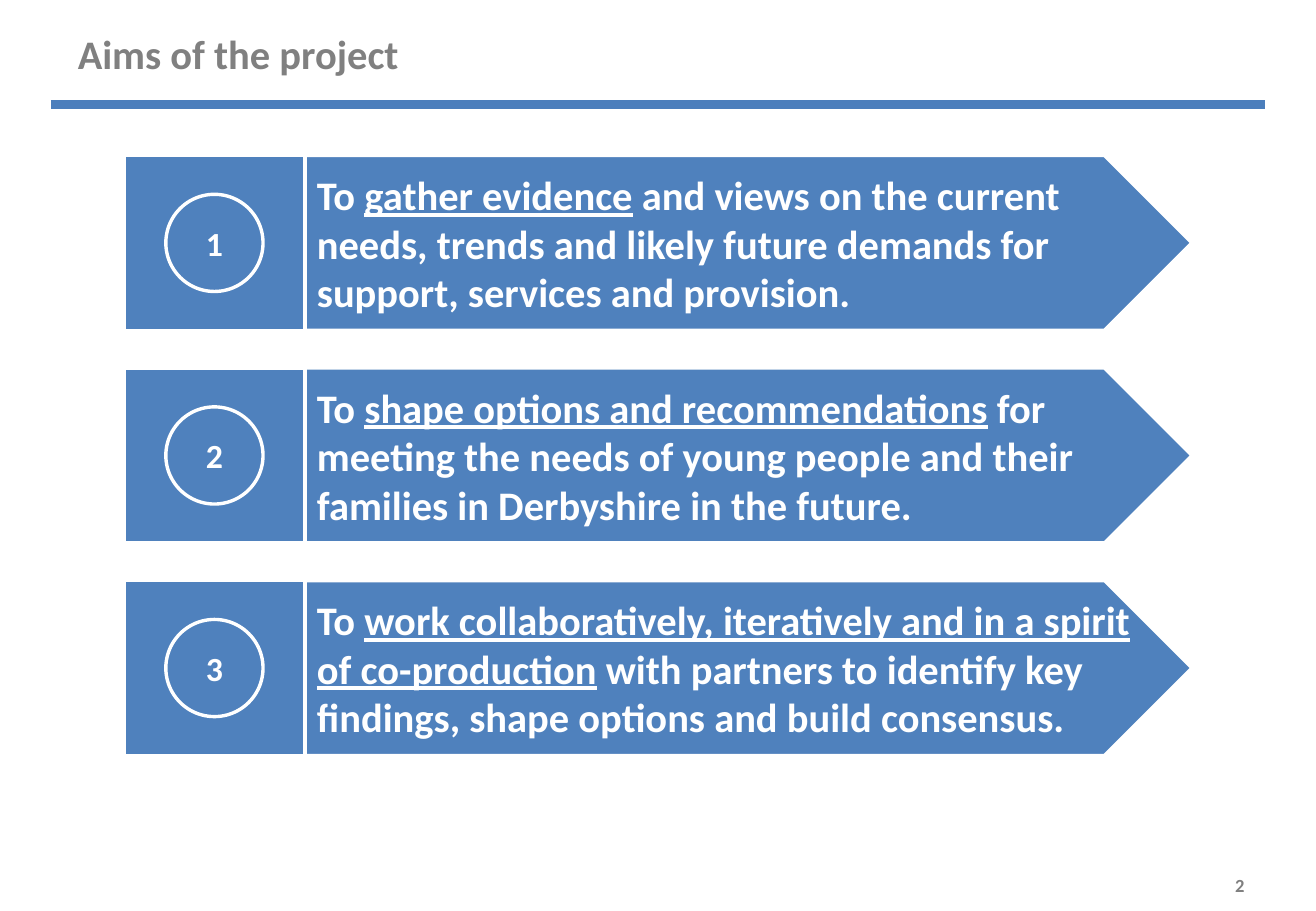
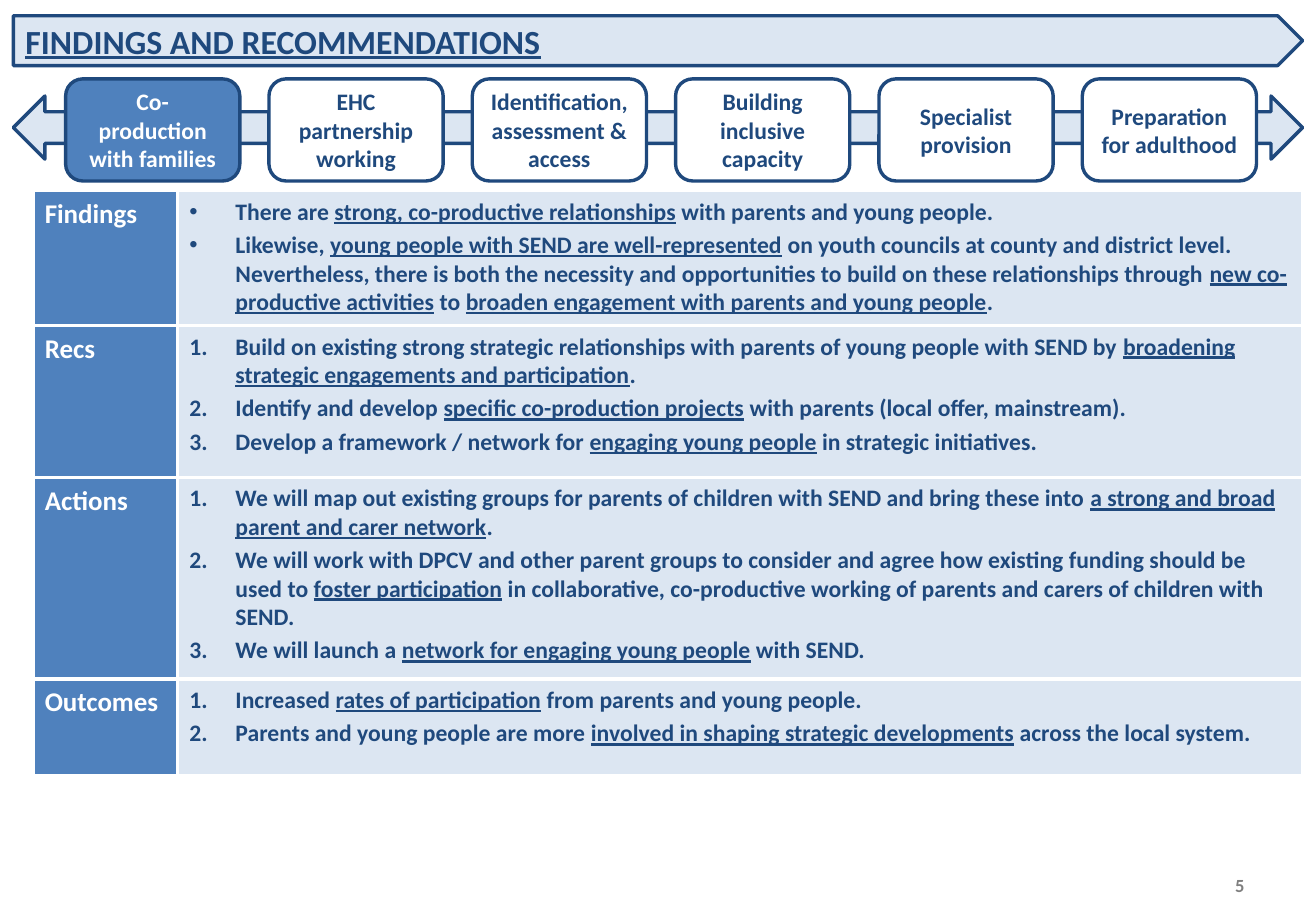
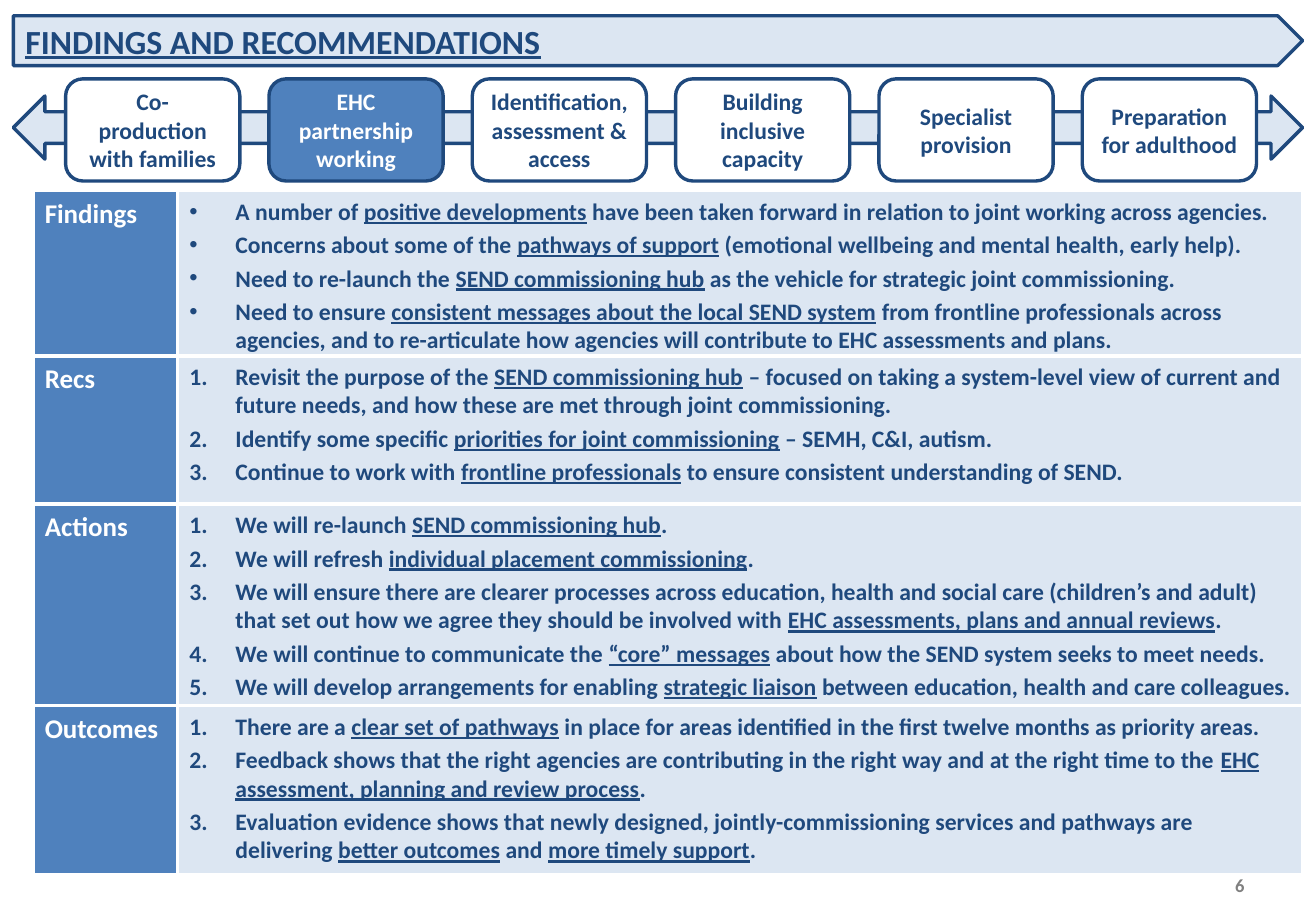
from dataclasses import dataclass

from lxml import etree
from pptx import Presentation
from pptx import util as u
from pptx.dml.color import RGBColor
from pptx.enum import shapes, text
from pptx.oxml.ns import qn

SHAPE, ALIGN, ANCHOR = shapes.MSO_SHAPE, text.PP_ALIGN, text.MSO_ANCHOR


@dataclass(frozen=True)
class Theme:
    blue: str = "4F81BD"
    rule: str = "4B7EBC"
    navy: str = "1F497D"
    pale: str = "DCE6F2"
    white: str = "FFFFFF"
    grey: str = "808080"
    font: str = "Calibri"
    title: int = 24
    banner: int = 20
    label: int = 16
    body: int = 14
    number: int = 11
    outline: int = 2


THEME = Theme()


@dataclass(frozen=True)
class Box:
    left: float
    top: float
    width: float
    height: float

    def emu(self):
        return [u.Inches(v) for v in (self.left, self.top, self.width, self.height)]

    def columns(self, weights, gap=0.0):
        unit = (self.width - gap * (len(weights) - 1)) / sum(weights)
        lefts = [self.left + unit * sum(weights[:i]) + gap * i for i in range(len(weights))]
        return [Box(left, self.top, unit * w, self.height) for left, w in zip(lefts, weights)]

    def rows(self, weights, gap=0.0):
        unit = (self.height - gap * (len(weights) - 1)) / sum(weights)
        tops = [self.top + unit * sum(weights[:i]) + gap * i for i in range(len(weights))]
        return [Box(self.left, top, self.width, unit * w) for top, w in zip(tops, weights)]

    def centred(self, size):
        return Box(self.left + (self.width - size) / 2,
                   self.top + (self.height - size) / 2, size, size)


PAGE = Box(0, 0, 10.83, 7.5)
TITLE = Box(0.54, -0.04, 9.75, 0.95)
RULE = Box(0.42, 0.86, 9.99, 0)
NUMBER = Box(7.81, 7.07, 2.53, 0.43)
AIMS = Box(1.02, 1.28, 8.79, 4.94)
BANNER = Box(0.11, 0.13, 10.61, 0.41)
ARROW = Box(0.11, 0.79, 10.61, 0.52)
STEPS = Box(0.54, 0.65, 9.8, 0.84)
GRID_LEFT, GRID_TOP, GRID_WIDTH = 0.27, 1.57, 10.45
LABEL_SHARES = (1.19, 9.26)
BODY_RIGHT_INSET = 0.08


def set_bullet(para, kind):
    props = para._p.get_or_add_pPr()
    indent = u.Inches(0.38)
    props.set("marL", str(indent))
    props.set("indent", str(-indent))
    if kind == "number":
        etree.SubElement(props, qn("a:buFont"), typeface="+mj-lt")
        etree.SubElement(props, qn("a:buAutoNum"), type="arabicPeriod")
    else:
        etree.SubElement(props, qn("a:buFont"), typeface="Arial")
        etree.SubElement(props, qn("a:buChar"), char="•")


def write(shape, lines, size, colour, align=ALIGN.LEFT, anchor=ANCHOR.MIDDLE,
          after=0, bullet=None):
    """Fill a shape with paragraphs; words between underscores are underlined."""
    frame = shape.text_frame
    frame_format = {"word_wrap": True, "auto_size": text.MSO_AUTO_SIZE.NONE,
                    "vertical_anchor": anchor}
    for name, value in frame_format.items():
        setattr(frame, name, value)
    for index, line in enumerate(lines):
        para = frame.add_paragraph() if index else frame.paragraphs[0]
        if bullet:
            set_bullet(para, bullet)
        para.alignment = align
        para.space_after = u.Pt(after)
        for part, words in enumerate(line.split("_")):
            if not words:
                continue
            span = para.add_run()
            span.text = words
            span_format = {"name": THEME.font, "size": u.Pt(size), "bold": True,
                           "underline": part % 2 == 1}
            for name, value in span_format.items():
                setattr(span.font, name, value)
            span.font.color.rgb = RGBColor.from_string(colour)


def draw(page, kind, box, fill, line):
    shape = page.shapes.add_shape(kind, *box.emu())
    shape.shadow.inherit = False
    shape.fill.solid()
    shape.fill.fore_color.rgb = RGBColor.from_string(fill)
    shape.line.color.rgb = RGBColor.from_string(line)
    shape.line.width = u.Pt(THEME.outline)
    return shape


def place_title(page, box, words, size, colour):
    title = page.shapes.title
    for name, value in zip(("left", "top", "width", "height"), box.emu()):
        setattr(title, name, value)
    write(title, [words], size, colour)
    return title


def new_page(deck, number):
    page = deck.slides.add_slide(deck.slide_layouts.get_by_name("Title Only"))
    box = page.shapes.add_textbox(*NUMBER.emu())
    write(box, [str(number)], THEME.number, THEME.grey, ALIGN.RIGHT)
    return page


def draw_rule(page, box):
    left, top, width, _ = box.emu()
    rule = page.shapes.add_connector(shapes.MSO_CONNECTOR.STRAIGHT, left, top, left + width, top)
    rule.line.color.rgb = RGBColor.from_string(THEME.rule)
    rule.line.width = u.Pt(5)
    etree.SubElement(rule.element.spPr, qn("a:effectLst"))


def draw_aim(page, box, number, aim):
    tile, plate = box.columns((1.49, 7.3))
    pentagon = draw(page, SHAPE.PENTAGON, plate, THEME.blue, THEME.white)
    write(pentagon, [aim], THEME.title, THEME.white)
    draw(page, SHAPE.RECTANGLE, tile, THEME.blue, THEME.white)
    circle = draw(page, SHAPE.OVAL, tile.centred(0.8), THEME.blue, THEME.white)
    write(circle, [str(number)], THEME.banner, THEME.white, ALIGN.CENTER)


def aims_page(deck, number, title, aims):
    page = new_page(deck, number)
    place_title(page, TITLE, title, THEME.title, THEME.grey)
    draw_rule(page, RULE)
    for index, (box, aim) in enumerate(zip(AIMS.rows([1] * len(aims), gap=0.31), aims), 1):
        draw_aim(page, box, index, aim)


def draw_banner(page, box, words):
    banner = draw(page, SHAPE.PENTAGON, box, THEME.pale, THEME.navy)
    title = place_title(page, box, f"_{words}_", THEME.banner, THEME.navy)
    banner.element.addnext(title.element)


def draw_steps(page, box, steps, current):
    """Draw the row of themes on its arrow, with the current one filled."""
    draw(page, SHAPE.LEFT_RIGHT_ARROW, ARROW, THEME.pale, THEME.navy)
    for cell, step in zip(box.columns([1] * len(steps), gap=0.24), steps):
        fill, colour = ((THEME.blue, THEME.white) if step == current
                        else (THEME.white, THEME.navy))
        pill = draw(page, SHAPE.ROUNDED_RECTANGLE, cell, fill, THEME.navy)
        write(pill, [step], THEME.body, colour, ALIGN.CENTER)


def draw_section(page, box, label, lines):
    label_box, body_box = box.columns(LABEL_SHARES)
    body = draw(page, SHAPE.RECTANGLE, body_box, THEME.pale, THEME.white)
    body.text_frame.margin_right = u.Inches(BODY_RIGHT_INSET)
    write(body, lines, THEME.body, THEME.navy, anchor=ANCHOR.TOP, after=3,
          bullet="dot" if label == "Findings" else "number")
    tile = draw(page, SHAPE.RECTANGLE, label_box, THEME.blue, THEME.white)
    write(tile, [label], THEME.label, THEME.white, anchor=ANCHOR.TOP, after=6)


def findings_page(deck, number, current, heights, sections):
    page = new_page(deck, number)
    draw_banner(page, BANNER, "FINDINGS AND RECOMMENDATIONS")
    draw_steps(page, STEPS, THEMES, current)
    grid = Box(GRID_LEFT, GRID_TOP, GRID_WIDTH, sum(heights))
    for box, (label, lines) in zip(grid.rows(heights), sections.items()):
        draw_section(page, box, label, lines)


THEMES = ["Co-production with families", "EHC partnership working",
          "Identification, assessment & access", "Building inclusive capacity",
          "Specialist provision", "Preparation for adulthood"]

AIM_LINES = [
    "To _gather evidence_ and views on the current needs, trends and likely future demands "
    "for support, services and provision.",
    "To _shape options and recommendations_ for meeting the needs of young people and their "
    "families in Derbyshire in the future.",
    "To _work collaboratively, iteratively and in a spirit of co-production_ with partners "
    "to identify key findings, shape options and build consensus.",
]

CO_PRODUCTION = {
    "Findings": [
        "There are _strong, co-productive relationships_ with parents and young people.",
        "Likewise, _young people with SEND are well-represented_ on youth councils at county "
        "and district level. Nevertheless, there is both the necessity and opportunities to "
        "build on these relationships through _new co-productive activities_ to _broaden "
        "engagement with parents and young people_.",
    ],
    "Recs": [
        "Build on existing strong strategic relationships with parents of young people with "
        "SEND by _broadening strategic engagements and participation_.",
        "Identify and develop _specific co-production projects_ with parents (local offer, "
        "mainstream).",
        "Develop a framework / network for _engaging young people_ in strategic initiatives.",
    ],
    "Actions": [
        "We will map out existing groups for parents of children with SEND and bring these "
        "into _a strong and broad parent and carer network_.",
        "We will work with DPCV and other parent groups to consider and agree how existing "
        "funding should be used to _foster participation_ in collaborative, co-productive "
        "working of parents and carers of children with SEND.",
        "We will launch a _network for engaging young people_ with SEND.",
    ],
    "Outcomes": [
        "Increased _rates of participation_ from parents and young people.",
        "Parents and young people are more _involved in shaping strategic developments_ "
        "across the local system.",
    ],
}

PARTNERSHIP = {
    "Findings": [
        "A number of _positive developments_ have been taken forward in relation to joint "
        "working across agencies.",
        "Concerns about some of the _pathways of support_ (emotional wellbeing and mental "
        "health, early help).",
        "Need to re-launch the _SEND commissioning hub_ as the vehicle for strategic joint "
        "commissioning.",
        "Need to ensure _consistent messages about the local SEND system_ from frontline "
        "professionals across agencies, and to re-articulate how agencies will contribute to "
        "EHC assessments and plans.",
    ],
    "Recs": [
        "Revisit the purpose of the _SEND commissioning hub_ – focused on taking a "
        "system-level view of current and future needs, and how these are met through joint "
        "commissioning.",
        "Identify some specific _priorities for joint commissioning_ – SEMH, C&I, autism.",
        "Continue to work with _frontline professionals_ to ensure consistent understanding "
        "of SEND.",
    ],
    "Actions": [
        "We will re-launch _SEND commissioning hub_.",
        "We will refresh _individual placement commissioning_.",
        "We will ensure there are clearer processes across education, health and social care "
        "(children’s and adult) that set out how we agree they should be involved with "
        "_EHC assessments, plans and annual reviews_.",
        "We will continue to communicate the _“core” messages_ about how the SEND system "
        "seeks to meet needs.",
        "We will develop arrangements for enabling _strategic liaison_ between education, "
        "health and care colleagues.",
    ],
    "Outcomes": [
        "There are a _clear set of pathways_ in place for areas identified in the first "
        "twelve months as priority areas.",
        "Feedback shows that the right agencies are contributing in the right way and at the "
        "right time to the _EHC assessment, planning and review process_.",
        "Evaluation evidence shows that newly designed, jointly-commissioning services and "
        "pathways are delivering _better outcomes_ and _more timely support_.",
    ],
}


def main():
    deck = Presentation()
    deck.slide_width, deck.slide_height = PAGE.emu()[2:]
    aims_page(deck, 2, "Aims of the project", AIM_LINES)
    findings_page(deck, 5, THEMES[0], (1.11, 1.25, 1.66, 0.8), CO_PRODUCTION)
    findings_page(deck, 6, THEMES[1], (1.36, 1.22, 1.66, 1.39), PARTNERSHIP)
    deck.save("out.pptx")


if __name__ == "__main__":
    main()
